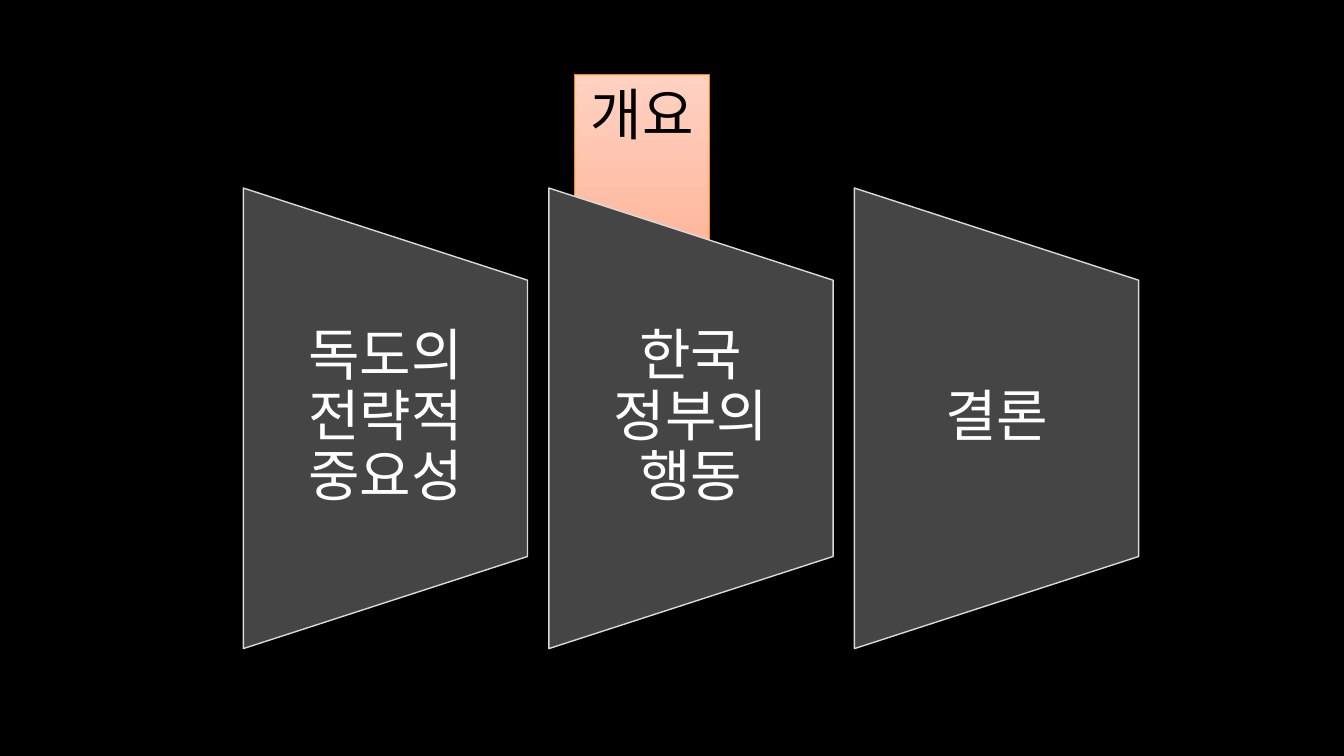
"""Build the Korean overview slide with three tapering section panels."""
from copy import deepcopy

from lxml import etree
from pptx import Presentation
from pptx.dml.color import RGBColor
from pptx.enum import lang, shapes, text
from pptx.oxml import ns
from pptx.util import Pt

FONT = "Noto Sans CJK KR"
TITLE = "개요"
SECTIONS = ["독도의 전략적 중요성", "한국 정부의 행동", "결론"]
TITLE_STOPS = [(0, "FFD2C2"), (0.52, "FEB99F"), (1, "FEA785")]
TITLE_AREA = (410.4, 53.28, 96.48, 55.44)
PANEL_LENGTH, PANEL_WIDTH = 329, 203
LABEL_HEIGHT = 197.3
FIRST_CENTER, CENTER_Y, PITCH = 275.3, 298.8, 218.25
TITLE_FRAME = {
    "word_wrap": False,
    "auto_size": text.MSO_AUTO_SIZE.SHAPE_TO_FIT_TEXT,
    "vertical_anchor": text.MSO_ANCHOR.TOP,
    "margin_left": Pt(7.2), "margin_right": Pt(7.2),
    "margin_top": Pt(3.6), "margin_bottom": Pt(3.6),
}
LABEL_FRAME = {
    "word_wrap": True,
    "auto_size": text.MSO_AUTO_SIZE.NONE,
    "vertical_anchor": text.MSO_ANCHOR.MIDDLE,
    "margin_left": Pt(20.16), "margin_right": Pt(20.16),
    "margin_top": 0, "margin_bottom": 0,
}
TITLE_PARA = {"alignment": text.PP_ALIGN.CENTER, "line_spacing": 1.0}
LABEL_PARA = {"alignment": text.PP_ALIGN.CENTER, "line_spacing": 0.9,
              "space_after": Pt(14)}
SPAN = {"size": Pt(40), "name": FONT, "language_id": lang.MSO_LANGUAGE_ID.KOREAN}


def color(value):
    return RGBColor.from_string(value)


def apply(target, values):
    for name, value in values.items():
        setattr(target, name, value)


def outline(shape, value, width):
    shape.line.color.rgb = color(value)
    shape.line.width = Pt(width)


def centered(x, y, width, height):
    return [Pt(v) for v in (x - width / 2, y - height / 2, width, height)]


def write(box, words, frame, para_format, ink):
    apply(box.text_frame, frame)
    para = box.text_frame.paragraphs[0]
    apply(para, para_format)
    span = para.add_run()
    span.text = words
    apply(span.font, SPAN)
    span.font.color.rgb = color(ink)
    east_asian = etree.SubElement(span.font._element, ns.qn("a:ea"))
    east_asian.set("typeface", FONT)


def add_title(page):
    box = page.shapes.title
    sides = ("left", "top", "width", "height")
    apply(box, dict(zip(sides, map(Pt, TITLE_AREA))))
    box.fill.gradient()
    box.fill.gradient_angle = 270
    stop_list = box.fill._xPr.find(ns.qn("a:gradFill")).find(ns.qn("a:gsLst"))
    stop_list.insert(1, deepcopy(stop_list[0]))
    for stop, (position, value) in zip(box.fill.gradient_stops, TITLE_STOPS):
        stop.position = position
        stop.color.rgb = color(value)
    outline(box, "FE801A", 0.75)
    write(box, TITLE, TITLE_FRAME, TITLE_PARA, "000000")


def add_sections(page):
    group = page.shapes.add_group_shape()
    for index, words in enumerate(SECTIONS):
        x = FIRST_CENTER + index * PITCH
        panel = group.shapes.add_shape(
            shapes.MSO_SHAPE.FLOWCHART_MANUAL_OPERATION,
            *centered(x, CENTER_Y, PANEL_LENGTH, PANEL_WIDTH))
        panel.rotation = 270
        panel.shadow.inherit = False
        panel.fill.solid()
        panel.fill.fore_color.rgb = color("454545")
        outline(panel, "DADADA", 1)
        label = group.shapes.add_textbox(
            *centered(x, CENTER_Y, PANEL_WIDTH, LABEL_HEIGHT))
        write(label, words, LABEL_FRAME, LABEL_PARA, "FFFFFF")


def main():
    deck = Presentation()
    deck.slide_width, deck.slide_height = Pt(960), Pt(540)
    page = deck.slides.add_slide(deck.slide_layouts[5])
    page.background.fill.solid()
    page.background.fill.fore_color.rgb = color("000000")
    add_title(page)
    add_sections(page)
    deck.save("out.pptx")


if __name__ == "__main__":
    main()
